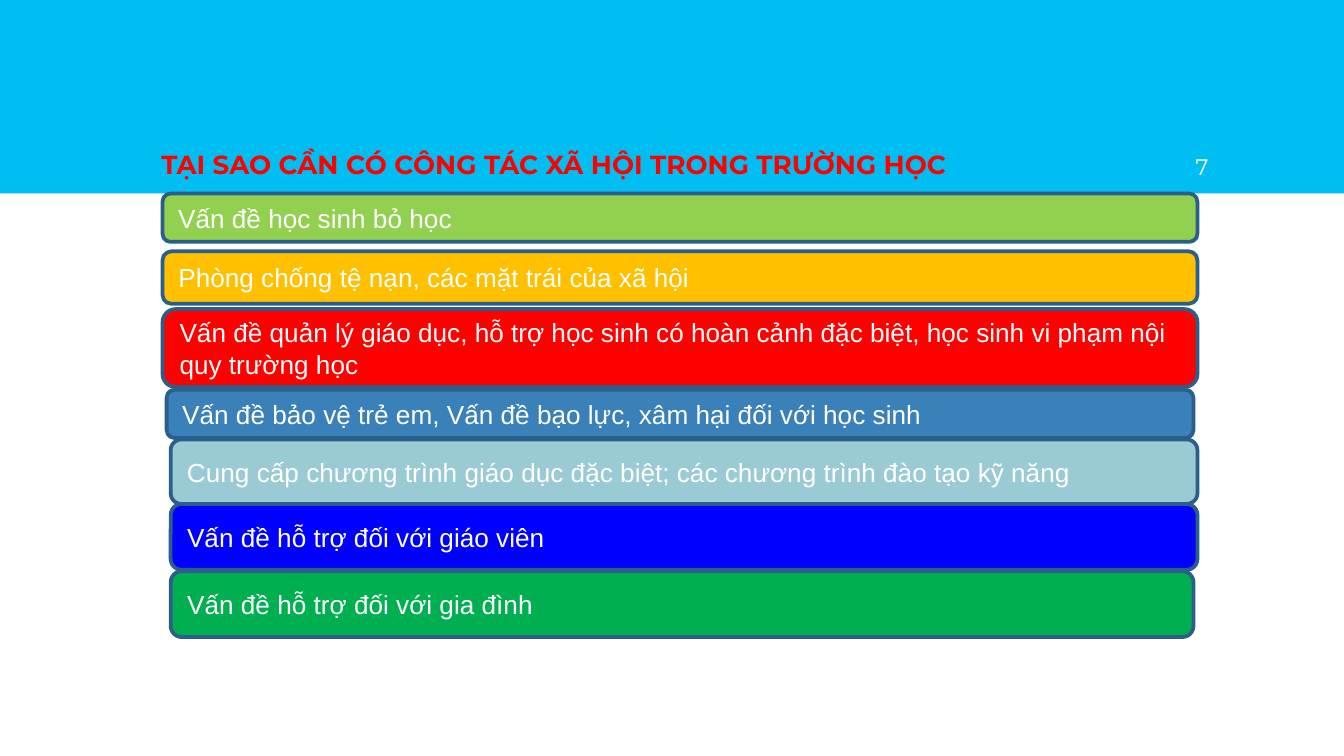
from pptx import Presentation
from pptx.dml.color import RGBColor
from pptx.enum.shapes import MSO_SHAPE as Shape
from pptx.enum.text import MSO_ANCHOR as Anchor, MSO_AUTO_SIZE as AutoSize, PP_ALIGN as Align
from pptx.util import Inches, Pt

WHITE = RGBColor(0xFF, 0xFF, 0xFF)
RED = RGBColor(0xFF, 0x00, 0x00)
SKY = RGBColor(0x00, 0xBE, 0xF2)
LIME = RGBColor(0x92, 0xD0, 0x50)
AMBER = RGBColor(0xFF, 0xC0, 0x00)
STEEL = RGBColor(0x3A, 0x81, 0xBA)
TEAL = RGBColor(0x9A, 0xCA, 0xD3)
BLUE = RGBColor(0x00, 0x00, 0xFF)
GREEN = RGBColor(0x00, 0xB0, 0x50)
OUTLINE = RGBColor(0x2B, 0x5F, 0x8A)

REASONS = [
    ("Vấn đề học sinh bỏ học", LIME, (1.21, 1.44, 7.7, 0.36)),
    ("Phòng chống tệ nạn, các mặt trái của xã hội", AMBER, (1.21, 1.87, 7.7, 0.39)),
    ("Vấn đề quản lý giáo dục, hỗ trợ học sinh có hoàn cảnh đặc biệt, "
     "học sinh vi phạm nội quy trường học", RED, (1.21, 2.3, 7.7, 0.58)),
    ("Vấn đề hỗ trợ đối với giáo viên", BLUE, (1.27, 3.75, 7.64, 0.49)),
    ("Vấn đề hỗ trợ đối với gia đình", GREEN, (1.27, 4.25, 7.61, 0.49)),
    ("Vấn đề bảo vệ trẻ em, Vấn đề bạo lực, xâm hại đối với học sinh",
     STEEL, (1.24, 2.9, 7.64, 0.36)),
    ("Cung cấp chương trình giáo dục đặc biệt; các chương trình đào tạo kỹ năng",
     TEAL, (1.27, 3.27, 7.64, 0.48)),
]


def write(shape, text, size=14, font="Arial", color=WHITE, bold=False,
          align=Align.LEFT, anchor=Anchor.MIDDLE, inset=(0.1, 0.05)):
    """Put formatted text into a shape."""
    frame = shape.text_frame
    frame.text = text
    frame.word_wrap = True
    frame.auto_size = AutoSize.NONE
    frame.vertical_anchor = anchor
    frame.margin_left = frame.margin_right = Inches(inset[0])
    frame.margin_top = frame.margin_bottom = Inches(inset[1])
    paragraph = frame.paragraphs[0]
    paragraph.alignment = align
    letters = paragraph.runs[0].font
    letters.name, letters.size, letters.bold = font, Pt(size), bold
    letters.color.rgb = color


def add_block(slide, kind, box, fill):
    """Add a flat filled shape without an outline."""
    block = slide.shapes.add_shape(kind, *map(Inches, box))
    block.shadow.inherit = False
    block.fill.solid()
    block.fill.fore_color.rgb = fill
    block.line.fill.background()
    return block


def add_header(slide):
    """Build the sky band with the title and the page number."""
    band = add_block(slide, Shape.RECTANGLE, (0, 0, 10, 1.44), SKY)
    slide.shapes.element.insert(2, band.element)
    heading = slide.shapes.title
    heading.left, heading.top, heading.width, heading.height = map(
        Inches, (1.1, 0.71, 7.8, 0.73))
    header_style = {"font": "Montserrat", "anchor": Anchor.BOTTOM, "inset": (0.1, 0.1)}
    write(heading, "TẠI SAO CẦN CÓ CÔNG TÁC XÃ HỘI TRONG TRƯỜNG HỌC",
          color=RED, bold=True, **header_style)
    page_number = slide.shapes.add_textbox(*map(Inches, (8.49, 0.71, 0.6, 0.73)))
    write(page_number, "7", size=12, align=Align.RIGHT, **header_style)


def add_reason(slide, text, fill, box):
    """Add one outlined bar with its reason."""
    bar = add_block(slide, Shape.ROUNDED_RECTANGLE, box, fill)
    bar.line.color.rgb = OUTLINE
    bar.line.width = Pt(2)
    write(bar, text)


def main():
    """Build and save the slide."""
    deck = Presentation()
    deck.slide_width = Inches(10)
    deck.slide_height = deck.slide_width * 9 // 16
    slide = deck.slides.add_slide(deck.slide_layouts[5])
    add_header(slide)
    for text, fill, box in REASONS:
        add_reason(slide, text, fill, box)
    deck.save("out.pptx")


if __name__ == "__main__":
    main()
